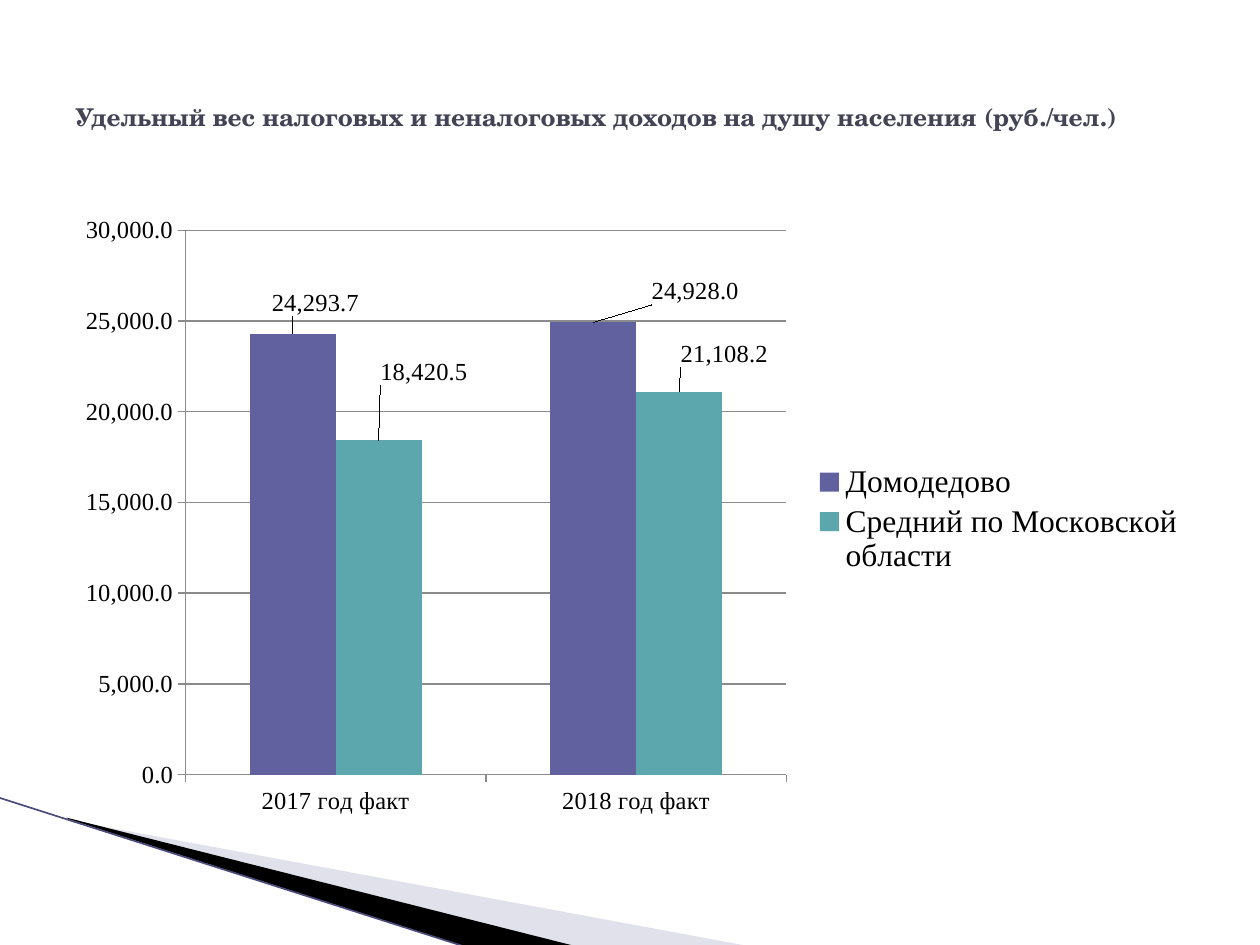
import dataclasses

import lxml.etree
import pptx
import pptx.chart.data
import pptx.dml.color
import pptx.enum.chart
import pptx.enum.shapes
import pptx.enum.text
import pptx.oxml
import pptx.oxml.ns
import pptx.util

Inches = pptx.util.Inches
qn = pptx.oxml.ns.qn


@dataclasses.dataclass(frozen=True)
class Theme:
    title_font: str = "TeX Gyre Schola"
    chart_font: str = "Times New Roman"
    title_size: int = 14
    label_size: int = 14
    legend_size: int = 18
    title: str = "424456"
    text: str = "000000"
    axis: str = "8B8B8B"
    wedge_light: str = "B6B6D1"
    wedge_dark: str = "000000"
    edge: str = "4C4C7C"
    series: tuple = ("60619E", "5BA7AD")


THEME = Theme()
CATEGORIES = ("2017 год факт", "2018 год факт")
SERIES = (
    ("Домодедово", (24293.7, 24928)),
    ("Средний по Московской области", (18420.5, 21108.2)),
)
NUMBER_FORMAT = "#,##0.0"
# Label shifts as fractions of the chart, one per point of each series
LABEL_SHIFTS = (((0.02, -0.02), (0.09, -0.02)), ((0.04, -0.08), (0.04, -0.03)))


def rgb(color):
    return pptx.dml.color.RGBColor.from_string(color)


def style_font(font, name, size, color, bold=False):
    font.name = name
    font.size = pptx.util.Pt(size)
    font.color.rgb = rgb(color)
    font.bold = bold


def add_wedge(slide, points, color, opacity=100):
    corners = [(Inches(x), Inches(y)) for x, y in points]
    builder = slide.shapes.build_freeform(*corners[0], scale=1.0)
    builder.add_line_segments(corners[1:], close=True)
    shape = builder.convert_to_shape()
    shape.shadow.inherit = False
    shape.fill.solid()
    shape.fill.fore_color.rgb = rgb(color)
    shape.line.fill.background()
    if opacity < 100:
        fill_color = shape.fill._xPr.find(".//" + qn("a:srgbClr"))
        alpha = lxml.etree.SubElement(fill_color, qn("a:alpha"))
        alpha.set("val", str(opacity * 1000))


def add_edge(slide, start, end):
    ends = [Inches(value) for value in (*start, *end)]
    connector = slide.shapes.add_connector(
        pptx.enum.shapes.MSO_CONNECTOR.STRAIGHT, *ends)
    connector.line.color.rgb = rgb(THEME.edge)
    connector.line.width = pptx.util.Pt(0.95)
    lxml.etree.SubElement(connector._element.spPr, qn("a:effectLst"))


def set_title(slide, text):
    title = slide.shapes.title
    title.left, title.top = Inches(0.5), Inches(0.3)
    title.width, title.height = Inches(9), Inches(1.25)
    frame = title.text_frame
    frame.word_wrap = True
    frame.vertical_anchor = pptx.enum.text.MSO_ANCHOR.MIDDLE
    paragraph = frame.paragraphs[0]
    paragraph.alignment = pptx.enum.text.PP_ALIGN.LEFT
    run = paragraph.add_run()
    run.text = text
    style_font(run.font, THEME.title_font, THEME.title_size, THEME.title, True)


def manual_layout(**settings):
    layout = lxml.etree.Element(qn("c:layout"))
    manual = lxml.etree.SubElement(layout, qn("c:manualLayout"))
    for name, value in settings.items():
        lxml.etree.SubElement(manual, qn("c:" + name)).set("val", str(value))
    return layout


def replace_layout(element, layout, after=None):
    for old in element.findall(qn("c:layout")):
        element.remove(old)
    position = 0 if after is None else element.index(element.find(qn(after))) + 1
    element.insert(position, layout)


def style_axis(axis):
    style_font(axis.tick_labels.font, THEME.chart_font, THEME.label_size, THEME.text)
    axis.format.line.color.rgb = rgb(THEME.axis)
    axis.major_tick_mark = pptx.enum.chart.XL_TICK_MARK.OUTSIDE
    axis.minor_tick_mark = pptx.enum.chart.XL_TICK_MARK.NONE


def style_labels(series, shifts):
    labels = series.data_labels
    labels.show_value = True
    labels.number_format = NUMBER_FORMAT
    labels.number_format_is_linked = False
    labels.position = pptx.enum.chart.XL_LABEL_POSITION.OUTSIDE_END
    style_font(labels.font, THEME.chart_font, THEME.label_size, THEME.text)
    for index, (x, y) in enumerate(shifts):
        label = series.points[index].data_label
        label.position = pptx.enum.chart.XL_LABEL_POSITION.OUTSIDE_END
        style_font(label.font, THEME.chart_font, THEME.label_size, THEME.text)
        element = series._element.findall(".//" + qn("c:dLbl"))[index]
        replace_layout(element, manual_layout(x=x, y=y), after="c:idx")


def add_revenue_chart(slide):
    data = pptx.chart.data.CategoryChartData(number_format=NUMBER_FORMAT)
    data.categories = CATEGORIES
    for name, values in SERIES:
        data.add_series(name, values)
    chart = slide.shapes.add_chart(
        pptx.enum.chart.XL_CHART_TYPE.COLUMN_CLUSTERED,
        Inches(0.5), Inches(1.62), Inches(9), Inches(4.95), data).chart
    chart.has_title = False
    style_font(chart.font, THEME.chart_font, THEME.legend_size, THEME.text)

    # Axes and gridlines
    style_axis(chart.category_axis)
    value_axis = chart.value_axis
    style_axis(value_axis)
    value_axis.minimum_scale, value_axis.maximum_scale = 0, 30000
    value_axis.major_unit = 5000
    value_axis.tick_labels.number_format = NUMBER_FORMAT
    value_axis.tick_labels.number_format_is_linked = False
    value_axis.major_gridlines.format.line.color.rgb = rgb(THEME.axis)

    # Columns and their labels
    plot = chart.plots[0]
    plot.gap_width = 150
    plot.overlap = 0
    plot.vary_by_categories = False
    for series, color, shifts in zip(plot.series, THEME.series, LABEL_SHIFTS):
        series.format.fill.solid()
        series.format.fill.fore_color.rgb = rgb(color)
        style_labels(series, shifts)

    # Legend and plot area positions
    chart.has_legend = True
    legend = chart.legend
    legend.position = pptx.enum.chart.XL_LEGEND_POSITION.RIGHT
    legend.include_in_layout = False
    style_font(legend.font, THEME.chart_font, THEME.legend_size, THEME.text)
    replace_layout(legend._element, manual_layout(
        xMode="edge", yMode="edge", x=0.66, y=0.41, w=0.33, h=0.19),
        after="c:legendPos")
    plot_area = chart._chartSpace.find(".//" + qn("c:plotArea"))
    replace_layout(plot_area, manual_layout(
        layoutTarget="inner", xMode="edge", yMode="edge",
        x=0.108, y=0.042, w=0.53, h=0.873))


def main():
    presentation = pptx.Presentation()
    presentation.slide_width = Inches(10)
    presentation.slide_height = Inches(7.5)
    slide = presentation.slides.add_slide(presentation.slide_layouts[5])

    # Corner decoration
    add_wedge(slide, ((0.55, 6.51), (5.95, 7.51), (4.56, 7.51), (0.55, 6.5)),
              THEME.wedge_light, opacity=40)
    add_wedge(slide, ((0.53, 6.49), (4.57, 7.51), (3.72, 7.52), (0.54, 6.5)),
              THEME.wedge_dark)
    add_edge(slide, (-0.01, 6.33), (3.71, 7.52))

    # Content
    add_revenue_chart(slide)
    set_title(slide, "Удельный вес налоговых и неналоговых доходов "
                     "на душу населения (руб./чел.)")
    presentation.save("out.pptx")


if __name__ == "__main__":
    main()
